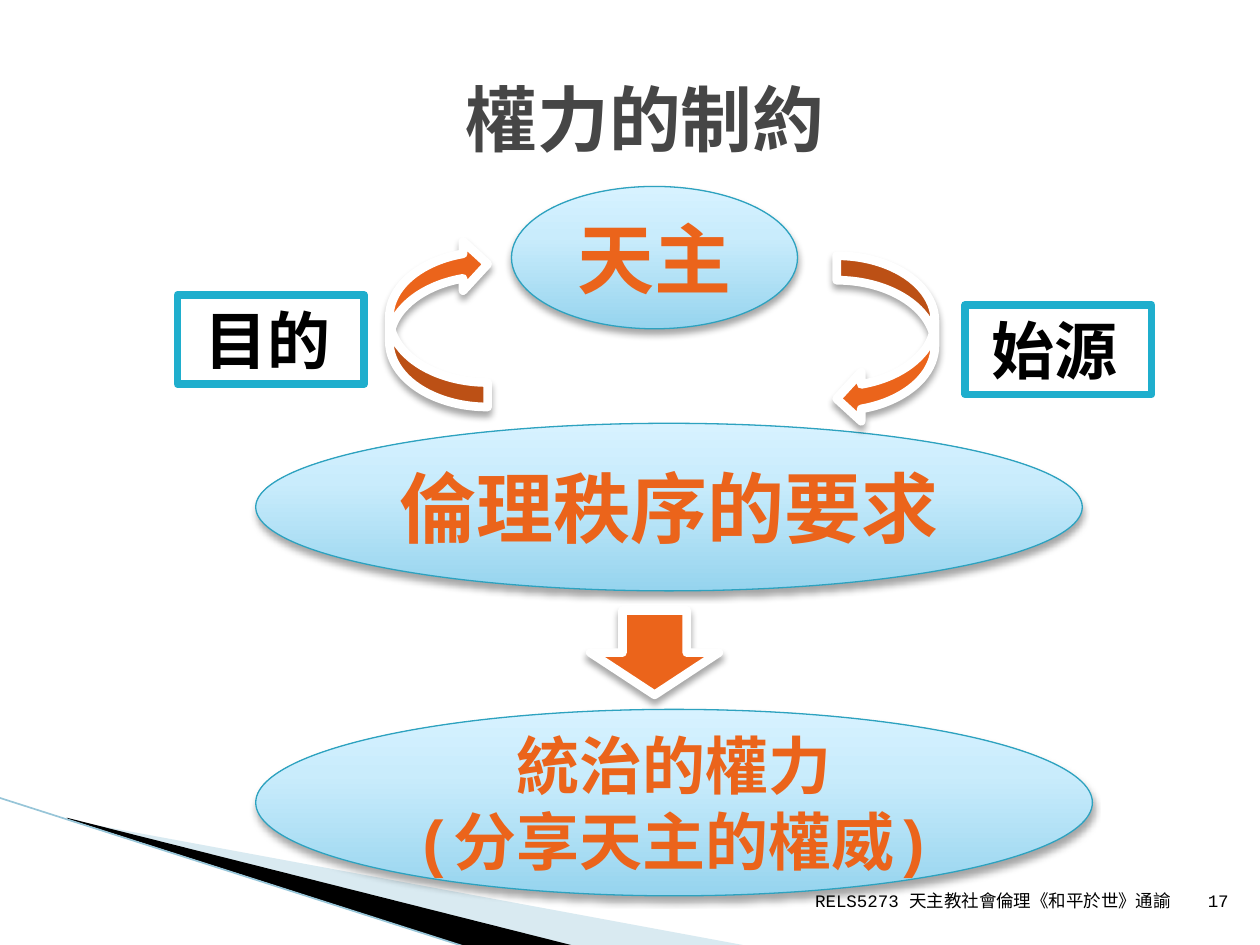
from copy import deepcopy

from lxml.etree import SubElement
from pptx import Presentation
from pptx.dml.color import RGBColor
from pptx.enum.shapes import MSO_CONNECTOR, MSO_SHAPE
from pptx.enum.text import MSO_ANCHOR, MSO_AUTO_SIZE, PP_ALIGN
from pptx.oxml.ns import qn
from pptx.util import Inches, Pt

BLACK = RGBColor(0, 0, 0)
WHITE = RGBColor(255, 255, 255)
GREY = RGBColor(0x46, 0x46, 0x46)
ORANGE = RGBColor(0xEB, 0x64, 0x1B)
TEAL = RGBColor(0x2D, 0xA2, 0xBF)
BOX_BLUE = RGBColor(0x1F, 0xAE, 0xCD)
WEDGE_BLUE = RGBColor(0xA0, 0xCB, 0xDC)
EDGE_BLUE = RGBColor(0x97, 0xC5, 0xD8)
GRADIENT = [(0, RGBColor(0x96, 0xD4, 0xEE)), (0.65, RGBColor(0xC9, 0xEC, 0xFC)),
            (1, RGBColor(0xD7, 0xF2, 0xFF))]
FONT = "Courier New"

# Content: boxes are left, top, width, height in inches
TITLE = ("權力的制約", (0.62, 0.31, 9, 1.25))
ELLIPSES = [
    (["倫理秩序的要求"], 44, (2.03, 3.36, 6.56, 1.33)),
    (["天主"], 44, (4.06, 1.48, 2.27, 1.13)),
    (["統治的權力", "(分享天主的權威)"], 36, (2.03, 5.63, 6.64, 1.48)),
]
LABELS = [(" 目的", (1.41, 2.34, 1.48, 0.71)), (" 始源", (7.66, 2.42, 1.48, 0.71))]
ARROWS = [
    (MSO_SHAPE.CURVED_LEFT_ARROW, 0, (6.64, 2.03, 0.78, 1.33)),
    (MSO_SHAPE.CURVED_LEFT_ARROW, 180, (3.09, 1.9, 0.78, 1.33)),
    (MSO_SHAPE.RIGHT_ARROW, 90, (4.86, 4.67, 0.67, 1.02)),
]
FOOTERS = [("RELS5273 天主教社會倫理《和平於世》通諭", (6.25, 6.88, 3.14, 0.4)),
           ("17", (9.45, 6.88, 0.4, 0.4))]
WEDGES = [
    ([(0.55, 6.51), (5.95, 7.51), (4.56, 7.51), (0.55, 6.5)], WEDGE_BLUE, 40),
    ([(0.53, 6.49), (4.57, 7.51), (3.72, 7.52), (0.54, 6.5)], BLACK, 100),
]
EDGE = [(-0.01, 6.33), (3.71, 7.52)]


def inches(values):
    return [Inches(v) for v in values]


def write(sp, lines, size, color, bold=True, align=PP_ALIGN.CENTER, anchor=MSO_ANCHOR.MIDDLE):
    tf = sp.text_frame
    tf.word_wrap = True
    tf.vertical_anchor = anchor
    for i, line in enumerate(lines):
        p = tf.paragraphs[0] if i == 0 else tf.add_paragraph()
        p.alignment = align
        r = p.add_run()
        r.text = line
        for name, value in {"name": FONT, "size": Pt(size), "bold": bold}.items():
            setattr(r.font, name, value)
        r.font.color.rgb = color


def add_shape(kind, box, line, width, fill=None):
    sp = s.shapes.add_shape(kind, *inches(box))
    sp.shadow.inherit = False
    if fill is not None:
        sp.fill.solid()
        sp.fill.fore_color.rgb = fill
    sp.line.color.rgb = line
    sp.line.width = Pt(width)
    return sp


def add_shadow(sp):
    effects = sp._element.spPr.find(qn("a:effectLst"))
    shadow = SubElement(effects, qn("a:outerShdw"), blurRad=str(Pt(4)), dist=str(Pt(3)),
                        dir="5400000", rotWithShape="0")
    color = SubElement(shadow, qn("a:srgbClr"), val=str(BLACK))
    SubElement(color, qn("a:alpha"), val="35000")


def fill_gradient(sp):
    sp.fill.gradient()
    sp.fill.gradient_angle = 90
    stops = sp._element.spPr.find(qn("a:gradFill")).find(qn("a:gsLst"))
    while len(stops) < len(GRADIENT):
        stops.append(deepcopy(stops[0]))
    for stop, (position, color) in zip(sp.fill.gradient_stops, GRADIENT):
        stop.color.rgb = color
        stop.position = position


prs = Presentation()
prs.slide_width, prs.slide_height = Inches(10), Inches(7.5)
s = prs.slides.add_slide(prs.slide_layouts[5])

# Corner decoration
for points, color, alpha in WEDGES:
    points = [inches(pt) for pt in points]
    builder = s.shapes.build_freeform(*points[0])
    builder.add_line_segments(points[1:], close=True)
    sp = builder.convert_to_shape()
    sp.shadow.inherit = False
    sp.fill.solid()
    sp.fill.fore_color.rgb = color
    sp.line.fill.background()
    if alpha < 100:
        rgb = sp._element.spPr.find(qn("a:solidFill"))[0]
        SubElement(rgb, qn("a:alpha"), val=str(alpha * 1000))
edge = s.shapes.add_connector(MSO_CONNECTOR.STRAIGHT, *inches(EDGE[0] + EDGE[1]))
edge.line.color.rgb = EDGE_BLUE
edge.line.width = Pt(0.95)
SubElement(edge._element.spPr, qn("a:effectLst"))

# Title, in front of the decoration
title = s.shapes.title
title.left, title.top, title.width, title.height = inches(TITLE[1])
write(title, [TITLE[0]], 41, GREY)
s.shapes._spTree.append(title._element)

# Levels of authority
for lines, size, box in ELLIPSES:
    sp = add_shape(MSO_SHAPE.OVAL, box, TEAL, 0.75)
    fill_gradient(sp)
    add_shadow(sp)
    write(sp, lines, size, ORANGE)

# Side labels
for text, box in LABELS:
    sp = add_shape(MSO_SHAPE.RECTANGLE, box, BOX_BLUE, 4.33, WHITE)
    write(sp, [text], 36, BLACK, align=PP_ALIGN.LEFT, anchor=MSO_ANCHOR.TOP)
    sp.text_frame.auto_size = MSO_AUTO_SIZE.SHAPE_TO_FIT_TEXT

# Arrows
for kind, rotation, box in ARROWS:
    sp = add_shape(kind, box, WHITE, 5, ORANGE)
    sp.rotation = rotation
    add_shadow(sp)

# Footer and slide number
for text, box in FOOTERS:
    sp = s.shapes.add_textbox(*inches(box))
    write(sp, [text], 10, BLACK, bold=False, align=PP_ALIGN.RIGHT, anchor=MSO_ANCHOR.BOTTOM)

prs.save("out.pptx")
